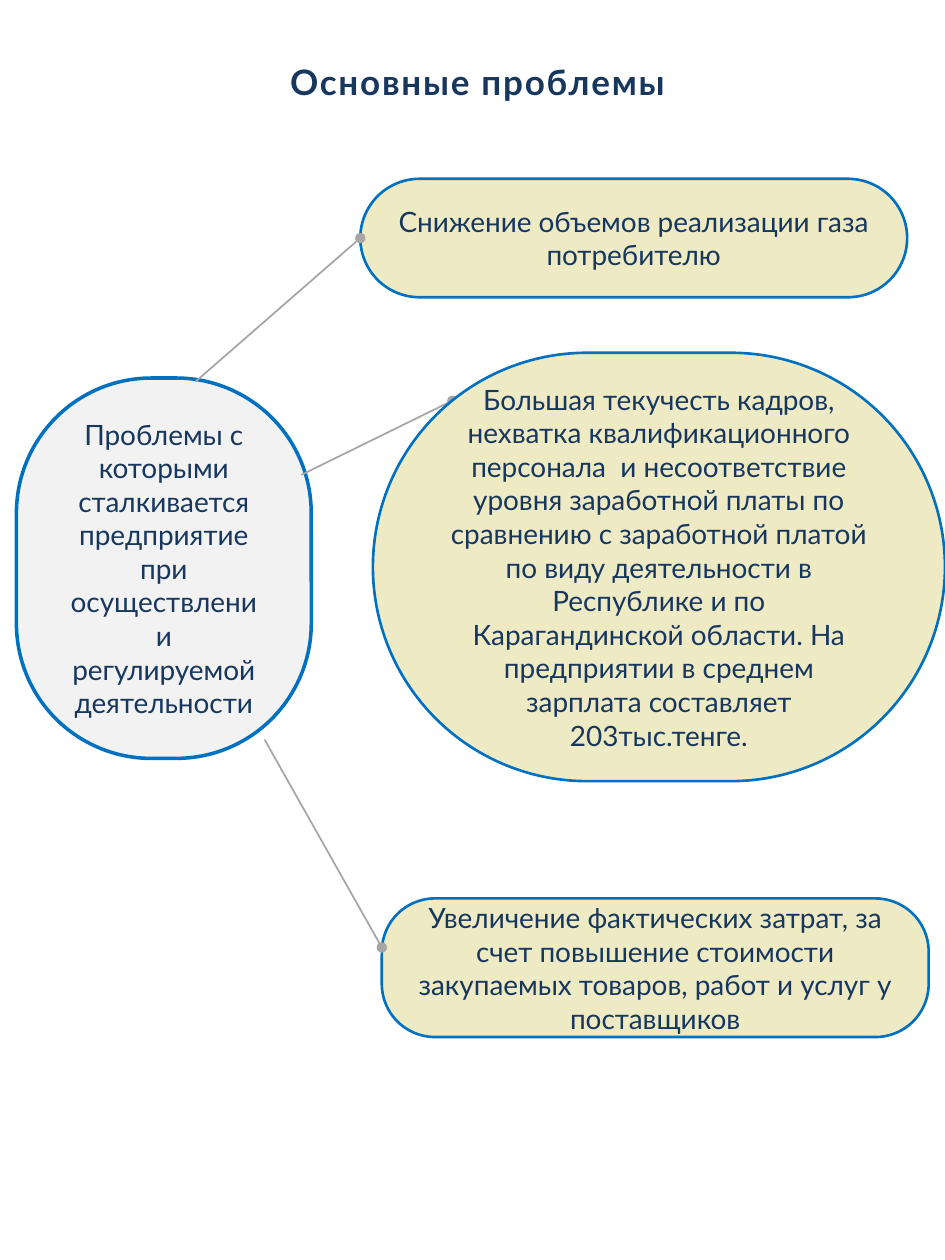
"""Build the slide on the main problems of a regulated enterprise."""
from lxml.etree import SubElement
from pptx import Presentation
from pptx.dml.color import RGBColor
from pptx.enum.shapes import MSO_CONNECTOR as Connector, MSO_SHAPE as Shape
from pptx.enum.text import MSO_ANCHOR as Anchor, PP_ALIGN as Align
from pptx.oxml.ns import qn
from pptx.util import Pt

NAVY = RGBColor(0x17, 0x37, 0x5E)
BLUE = RGBColor(0x00, 0x70, 0xC0)
GREY = RGBColor(0xA6, 0xA6, 0xA6)
PALE = RGBColor(0xF2, 0xF2, 0xF2)
CREAM = RGBColor(0xEE, 0xEB, 0xC4)

TITLE = "Основные проблемы"
TITLE_AREA = (2.9, 31, 540, 31.7)
HUB = {
    "text": "Проблемы с которыми сталкивается предприятие при осуществлении "
            "регулируемой деятельности",
    "area": (9.4, 216, 168.5, 217.4), "rounding": 0.458,
}
PROBLEMS = [
    {"text": "Снижение объемов реализации газа потребителю",
     "area": (205.9, 102.2, 312.5, 67.7), "rounding": 0.5,
     "start": (111.6, 218.2), "end": (205.9, 136.1), "joined": True},
    {"text": "Большая текучесть кадров, нехватка квалификационного персонала  и "
             "несоответствие уровня заработной платы по сравнению с заработной "
             "платой по виду деятельности в Республике и по Карагандинской "
             "области. На предприятии в среднем зарплата составляет "
             "203тыс.тенге.",
     "area": (213.1, 201.6, 326.9, 244.8), "rounding": 0.5,
     "start": (172.1, 271.4), "end": (258.5, 229), "line_behind": True},
    {"text": "Увеличение фактических затрат, за счет повышение стоимости "
             "закупаемых товаров, работ и услуг у поставщиков",
     "area": (218.2, 513.4, 312.5, 79.2), "rounding": 0.384,
     "start": (151.2, 422.6), "end": (218.2, 541.4)},
]


def points(values):
    return [Pt(value) for value in values]


def write(frame, text, size=16, bold=False, spacing=0):
    frame.word_wrap = True
    para = frame.paragraphs[0]
    para.alignment = Align.CENTER
    span = para.add_run()
    span.text = text
    span.font.name = "Lato"
    span.font.size = Pt(size)
    span.font.bold = bold
    span.font.color.rgb = NAVY
    if spacing:
        span.font._element.set("spc", str(spacing * 100))


def add_bubble(page, item, fill=CREAM, width=1.5):
    box = page.shapes.add_shape(Shape.ROUNDED_RECTANGLE, *points(item["area"]))
    box.adjustments[0] = item["rounding"]
    box.shadow.inherit = False
    box.fill.solid()
    box.fill.fore_color.rgb = fill
    box.line.color.rgb = BLUE
    box.line.width = Pt(width)
    box.text_frame.vertical_anchor = Anchor.MIDDLE
    write(box.text_frame, item["text"])
    return box


def add_link(page, item):
    link = page.shapes.add_connector(
        Connector.STRAIGHT, *points(item["start"] + item["end"]))
    link.line.color.rgb = GREY
    link.line.width = Pt(1)
    SubElement(link.line._get_or_add_ln(), qn("a:tailEnd"), type="oval")
    SubElement(link._element.spPr, qn("a:effectLst"))
    return link


def main():
    deck = Presentation()
    deck.slide_width, deck.slide_height = Pt(540), Pt(720)
    page = deck.slides.add_slide(deck.slide_layouts[6])
    title = page.shapes.add_textbox(*points(TITLE_AREA))
    write(title.text_frame, TITLE, size=20, bold=True, spacing=1)
    add_bubble(page, HUB, fill=PALE, width=2)
    for problem in PROBLEMS:
        if problem.get("line_behind"):
            add_link(page, problem)
            add_bubble(page, problem)
        else:
            box = add_bubble(page, problem)
            link = add_link(page, problem)
            if problem.get("joined"):
                link.end_connect(box, 1)
    deck.save("out.pptx")


if __name__ == "__main__":
    main()
